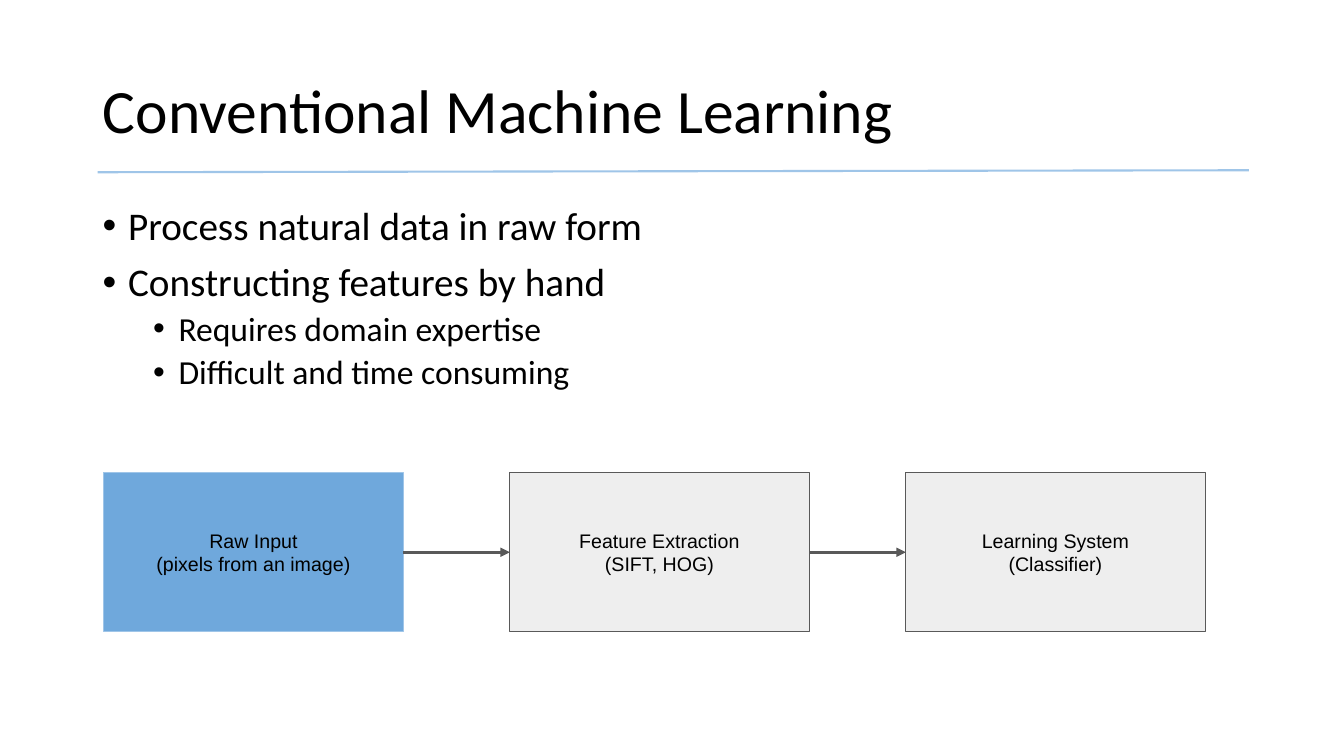
from dataclasses import dataclass
from itertools import pairwise

from lxml.etree import SubElement
from pptx import Presentation
from pptx.dml.color import RGBColor
from pptx.enum.shapes import MSO_CONNECTOR as Connector, MSO_SHAPE as Shape
from pptx.enum.text import MSO_ANCHOR as Anchor, PP_ALIGN as Align
from pptx.oxml.ns import qn
from pptx.util import Cm, Pt

BLACK = "000000"
GRAY = "595959"
PALE_BLUE = "9FC5E8"
STAGE_TOP, STAGE_WIDTH, STAGE_HEIGHT = 11.91, 7.54, 4.01
TEXT_LEFT, TEXT_WIDTH = 2.34, 29.21


@dataclass
class Bullet:
    text: str
    size: float = 28
    indent: float = 0.64
    space_before: float = 0


@dataclass
class Stage:
    lines: tuple[str, str]
    left: float
    fill: str = "EEEEEE"
    outline: str = GRAY


BULLETS = [
    Bullet("Process natural data in raw form"),
    Bullet("Constructing features by hand", space_before=10),
    Bullet("Requires domain expertise", 24, 1.91, 5),
    Bullet("Difficult and time consuming", 24, 1.91, 5),
]
STAGES = [
    Stage(("Raw Input", "(pixels from an image)"), 2.62, "6FA8DC", PALE_BLUE),
    Stage(("Feature Extraction", "(SIFT, HOG)"), 12.85),
    Stage(("Learning System", "(Classifier)"), 22.83),
]


def color(hex_value: str) -> RGBColor:
    return RGBColor.from_string(hex_value)


def write(paragraph, text: str, *, size: float, font: str = "Calibri",
          align=Align.LEFT, line_spacing: float = 0.9, space_before: float = 0) -> None:
    paragraph.alignment = align
    paragraph.line_spacing = line_spacing
    paragraph.space_before = Pt(space_before)
    run = paragraph.add_run()
    run.text = text
    run.font.name = font
    run.font.size = Pt(size)
    run.font.color.rgb = color(BLACK)


def paragraphs_for(text_frame, items):
    """Pair each item with its own paragraph, using the first one already there."""
    for index, item in enumerate(items):
        yield (text_frame.add_paragraph() if index else text_frame.paragraphs[0]), item


def add_text_frame(slide, top: float, height: float, anchor):
    box = slide.shapes.add_textbox(Cm(TEXT_LEFT), Cm(top), Cm(TEXT_WIDTH), Cm(height))
    box.text_frame.word_wrap = True
    box.text_frame.vertical_anchor = anchor
    return box.text_frame


def set_bullet(paragraph, indent: float) -> None:
    properties = paragraph._p.get_or_add_pPr()
    properties.set("marL", str(Cm(indent)))
    properties.set("indent", str(-Cm(0.64)))
    SubElement(properties, qn("a:buFont"), typeface="Arial")
    SubElement(properties, qn("a:buChar"), char="•")


def add_stage(slide, stage: Stage):
    shape = slide.shapes.add_shape(Shape.RECTANGLE, Cm(stage.left), Cm(STAGE_TOP),
                                   Cm(STAGE_WIDTH), Cm(STAGE_HEIGHT))
    shape.shadow.inherit = False
    shape.fill.solid()
    shape.fill.fore_color.rgb = color(stage.fill)
    shape.line.color.rgb = color(stage.outline)
    shape.line.width = Pt(0.75)
    frame = shape.text_frame
    frame.word_wrap = True
    frame.vertical_anchor = Anchor.MIDDLE
    frame.margin_top = frame.margin_bottom = Cm(0.25)
    for paragraph, line in paragraphs_for(frame, stage.lines):
        write(paragraph, line, size=14, font="Arial", align=Align.CENTER, line_spacing=1.0)
    return shape


def add_line(slide, start: tuple[float, float], end: tuple[float, float],
             hex_value: str, width: float):
    line = slide.shapes.add_connector(Connector.STRAIGHT, *map(Cm, start + end))
    line.line.color.rgb = color(hex_value)
    line.line.width = Pt(width)
    SubElement(line._element.spPr, qn("a:effectLst"))
    return line


def add_arrow(slide, source, target) -> None:
    arrow = add_line(slide, (0, 0), (0, 0), GRAY, 2.25)
    arrow.begin_connect(source, 3)
    arrow.end_connect(target, 1)
    SubElement(arrow.line._get_or_add_ln(), qn("a:tailEnd"), type="triangle")


def main() -> None:
    presentation = Presentation()
    presentation.slide_width, presentation.slide_height = Cm(33.87), Cm(19.05)
    slide = presentation.slides.add_slide(presentation.slide_layouts[6])

    title = add_text_frame(slide, 1.02, 3.68, Anchor.MIDDLE)
    write(title.paragraphs[0], "Conventional Machine Learning", size=44)

    body = add_text_frame(slide, 5.08, 12.09, Anchor.TOP)
    for paragraph, bullet in paragraphs_for(body, BULLETS):
        write(paragraph, bullet.text, size=bullet.size, space_before=bullet.space_before)
        set_bullet(paragraph, bullet.indent)

    boxes = [add_stage(slide, stage) for stage in STAGES]
    for source, target in pairwise(boxes):
        add_arrow(slide, source, target)
    add_line(slide, (2.46, 4.34), (31.47, 4.29), PALE_BLUE, 1.5)

    presentation.save("out.pptx")


if __name__ == "__main__":
    main()
